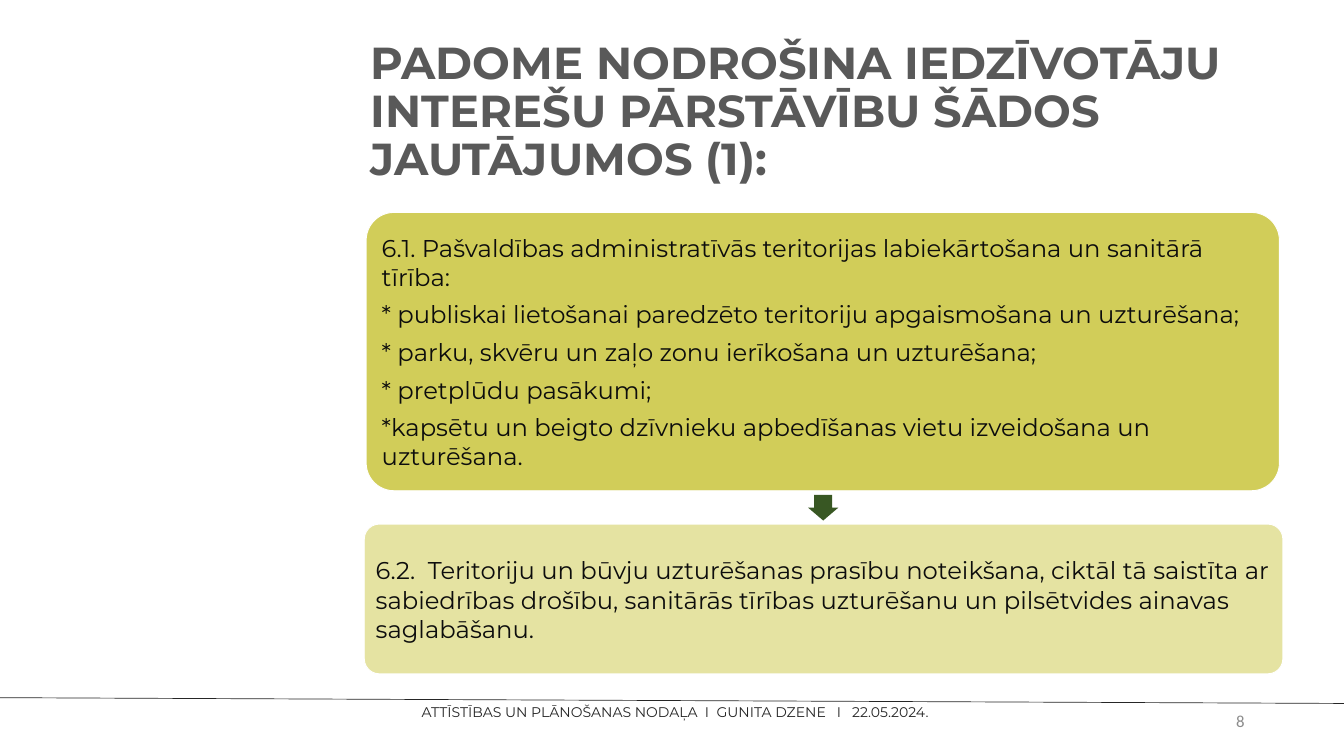
from lxml import etree
from pptx import Presentation
from pptx.dml.color import RGBColor
from pptx.enum.shapes import MSO_CONNECTOR, MSO_SHAPE
from pptx.enum.text import MSO_ANCHOR as Anchor, MSO_AUTO_SIZE, PP_ALIGN as Align
from pptx.oxml.ns import qn
from pptx.util import Cm, Pt


def paint(color_format, hex_color, opacity=100):
    """Set a colour; opacity is in percent."""
    color_format.rgb = RGBColor.from_string(hex_color)
    if opacity < 100:
        color = color_format._xFill.find(qn("a:srgbClr"))
        etree.SubElement(color, qn("a:alpha"), val=str(opacity * 1000))


def add_text(box, lines, size, hex_color, font="Montserrat", bold=False,
             anchor=Anchor.MIDDLE, align=Align.LEFT, inset=None,
             line_spacing=None, space_after=None):
    """Add a wrapped text box at box (left, top, width, height in cm)."""
    textbox = slide.shapes.add_textbox(*map(Cm, box))
    frame = textbox.text_frame
    frame.text = "\n".join(lines)
    frame.word_wrap = True
    frame.vertical_anchor = anchor
    if inset is not None:
        frame.margin_left = frame.margin_right = Cm(inset)
        frame.margin_top = frame.margin_bottom = Cm(inset)
    for paragraph in frame.paragraphs:
        paragraph.alignment = align
        paragraph.line_spacing = line_spacing
        paragraph.space_after = space_after
        for run in paragraph.runs:
            run.font.name = font
            run.font.size = Pt(size)
            run.font.bold = bold
            paint(run.font.color, hex_color)
    return frame


prs = Presentation()
prs.slide_width, prs.slide_height = Cm(50.8), Cm(28.575)
slide = prs.slides.add_slide(prs.slide_layouts[6])

add_text((13.77, 1.52, 33.55, 5.51),
         ["PADOME NODROŠINA IEDZĪVOTĀJU INTEREŠU PĀRSTĀVĪBU ŠĀDOS JAUTĀJUMOS (1):"],
         48, "595959", bold=True, line_spacing=0.9)

# Each duty: panel box, panel opacity, text box, text
duties = [
    ((13.84, 8.03, 34.52, 10.52), 90, (14.15, 8.36, 33.91, 9.88), [
        "6.1. Pašvaldības administratīvās teritorijas labiekārtošana un sanitārā tīrība:",
        "* publiskai lietošanai paredzēto teritoriju apgaismošana un uzturēšana;",
        "* parku, skvēru un zaļo zonu ierīkošana un uzturēšana;",
        "* pretplūdu pasākumi;",
        "*kapsētu un beigto dzīvnieku apbedīšanas vietu izveidošana un uzturēšana.",
    ]),
    ((13.77, 19.81, 34.72, 5.66), 50, (13.92, 19.99, 34.39, 5.33), [
        "6.2.  Teritoriju un būvju uzturēšanas prasību noteikšana, ciktāl tā saistīta ar "
        "sabiedrības drošību, sanitārās tīrības uzturēšanu un pilsētvides ainavas saglabāšanu.",
    ]),
]
for panel_box, opacity, text_box, lines in duties:
    panel = slide.shapes.add_shape(MSO_SHAPE.ROUNDED_RECTANGLE, *map(Cm, panel_box))
    panel.shadow.inherit = False
    panel.adjustments[0] = 0.1
    panel.fill.solid()
    paint(panel.fill.fore_color, "CDC847", opacity)
    paint(panel.line.color, "FFFFFF")
    panel.line.width = Pt(1)
    add_text(text_box, lines, 26, "0D0D0D", inset=0.28, space_after=Pt(9.1))

arrow = slide.shapes.add_shape(MSO_SHAPE.RIGHT_ARROW, Cm(30.63), Cm(18.62), Cm(0.97), Cm(1.14))
arrow.rotation = 90
arrow.shadow.inherit = False
arrow.adjustments[0] = 0.6
arrow.adjustments[1] = 0.5
arrow.fill.solid()
paint(arrow.fill.fore_color, "385723")
arrow.line.fill.background()

footer_rule = slide.shapes.add_connector(
    MSO_CONNECTOR.STRAIGHT, Cm(0), Cm(26.37), Cm(51.08), Cm(26.59))
paint(footer_rule.line.color, "262626")
footer_rule.line.width = Pt(0.75)
etree.SubElement(footer_rule._element.spPr, qn("a:effectLst"))

footer = add_text((0.38, 26.59, 50.29, 0.64),
                  ["ATTĪSTĪBAS UN PLĀNOŠANAS NODAĻA  I  GUNITA DZENE   I   22.05.2024."],
                  15, "262626", anchor=Anchor.TOP, align=Align.CENTER, inset=0,
                  line_spacing=Pt(18))
footer.auto_size = MSO_AUTO_SIZE.SHAPE_TO_FIT_TEXT

add_text((35.86, 26.49, 11.43, 1.52), ["8"], 18, "8C8C8C", font="Calibri", align=Align.RIGHT)

prs.save("out.pptx")
